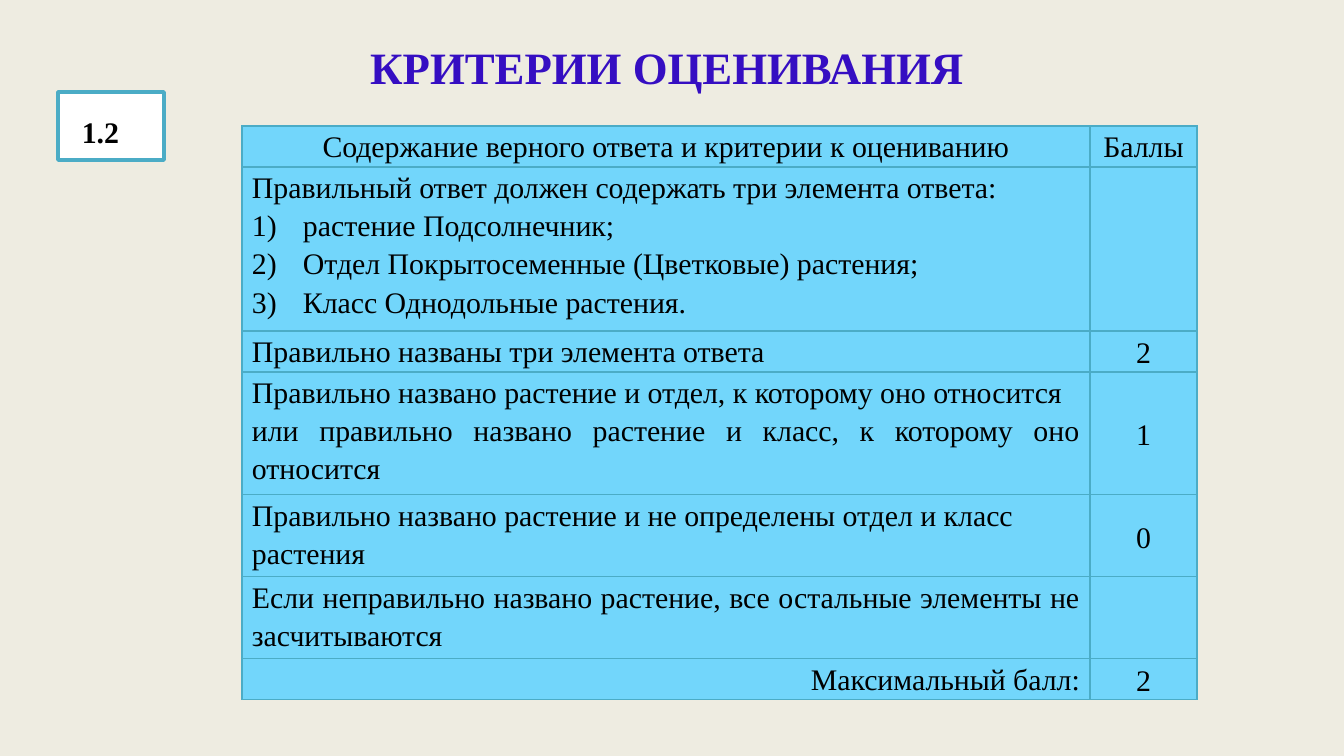
from dataclasses import dataclass

from lxml.etree import SubElement
from pptx import Presentation
from pptx.dml.color import RGBColor
from pptx.enum.shapes import MSO_SHAPE
from pptx.enum.text import MSO_ANCHOR as Anchor, PP_ALIGN as Align
from pptx.oxml.ns import qn
from pptx.util import Emu, Pt

PX = 914400 / 134.4
SERIF = "Times New Roman"
BLACK, WHITE, CREAM = "000000", "FFFFFF", "EEECE1"
VIOLET, TEAL, SKY = "350EC2", "4BACC6", "72D6FB"
LINE_HEIGHT = 41
COLUMNS = (848, 107)


@dataclass(frozen=True)
class Para:
    """One paragraph of a criterion."""
    text: str
    align: Align = Align.JUSTIFY
    numbered: bool = False


@dataclass(frozen=True)
class Criterion:
    """One table row; its height is a count of text lines."""
    lines: int
    paras: tuple[Para, ...]
    points: str = ""
    points_anchor: Anchor = Anchor.MIDDLE


CRITERIA = (
    Criterion(1, (Para("Содержание верного ответа и критерии к оцениванию", Align.CENTER),),
              "Баллы", Anchor.TOP),
    Criterion(4, (Para("Правильный ответ должен содержать три элемента ответа:"),
                  Para("растение Подсолнечник;", numbered=True),
                  Para("Отдел Покрытосеменные (Цветковые) растения;", numbered=True),
                  Para("Класс Однодольные растения.", numbered=True))),
    Criterion(1, (Para("Правильно названы три элемента ответа"),), "2"),
    Criterion(3, (Para("Правильно названо растение и отдел, к которому оно относится"),
                  Para("или правильно названо растение и класс, к которому оно относится")), "1"),
    Criterion(2, (Para("Правильно названо растение и не определены отдел и класс растения",
                       Align.LEFT),), "0"),
    Criterion(2, (Para("Если неправильно названо растение, все остальные элементы "
                       "не засчитываются"),)),
    Criterion(1, (Para("Максимальный балл:", Align.RIGHT),), "2"),
)


def px(n: int) -> Emu:
    """Turn pixels into EMU."""
    return Emu(round(n * PX))


def rgb(color: str) -> RGBColor:
    """Turn a hex string into a colour."""
    return RGBColor.from_string(color)


def add_run(p, text: str, size: int = 16, color: str = BLACK,
            bold: bool = False, font: str = SERIF) -> None:
    """Append a formatted run to a paragraph."""
    r = p.add_run()
    r.text = text
    r.font.name, r.font.size, r.font.bold = font, Pt(size), bold
    r.font.color.rgb = rgb(color)


def number(p) -> None:
    """Number a paragraph as 1), 2), 3) with a hanging indent."""
    pPr = p._p.get_or_add_pPr()
    pPr.set("marL", str(px(51)))
    pPr.set("indent", str(-px(51)))
    SubElement(pPr, qn("a:buFont"), typeface="+mj-lt")
    SubElement(pPr, qn("a:buAutoNum"), type="arabicParenR")


def add_borders(cell) -> None:
    """Draw a thin line on the four sides of a cell."""
    tcPr = cell._tc.get_or_add_tcPr()
    for i, side in enumerate(("lnL", "lnR", "lnT", "lnB")):
        ln = tcPr.makeelement(qn(f"a:{side}"), {"w": str(Pt(0.79))})
        SubElement(SubElement(ln, qn("a:solidFill")), qn("a:srgbClr"), val=TEAL)
        tcPr.insert(i, ln)


def fill_cell(cell, paras: tuple[Para, ...], anchor: Anchor) -> None:
    """Format a cell and write its paragraphs."""
    cell.fill.solid()
    cell.fill.fore_color.rgb = rgb(SKY)
    add_borders(cell)
    cell.margin_left = cell.margin_right = px(10)
    cell.margin_top = cell.margin_bottom = 0
    cell.vertical_anchor = anchor
    tf = cell.text_frame
    for i, para in enumerate(paras):
        p = tf.add_paragraph() if i else tf.paragraphs[0]
        p.alignment, p.line_spacing = para.align, 1.15
        if para.numbered:
            number(p)
        add_run(p, para.text)


def add_title(s) -> None:
    """Place and write the slide title."""
    sp = s.shapes.title
    sp.left, sp.top, sp.width, sp.height = px(16), px(19), px(1302), px(95)
    tf = sp.text_frame
    tf.vertical_anchor = Anchor.MIDDLE
    p = tf.paragraphs[0]
    p.alignment = Align.CENTER
    add_run(p, "КРИТЕРИИ ОЦЕНИВАНИЯ", 24, VIOLET, True)


def add_task_label(s) -> None:
    """Draw the framed task number."""
    sp = s.shapes.add_shape(MSO_SHAPE.RECTANGLE, px(58), px(92), px(106), px(68))
    sp.shadow.inherit = False
    sp.fill.solid()
    sp.fill.fore_color.rgb = rgb(WHITE)
    sp.line.color.rgb, sp.line.width = rgb(TEAL), Pt(2)
    tf = sp.text_frame
    tf.word_wrap, tf.vertical_anchor = True, Anchor.TOP
    p = tf.paragraphs[0]
    p.alignment = Align.LEFT
    add_run(p, " ", 24, font="Karla")
    add_run(p, "1.2", bold=True)


def add_criteria(s) -> None:
    """Build the table of criteria and points."""
    height = LINE_HEIGHT * sum(c.lines for c in CRITERIA)
    table = s.shapes.add_table(len(CRITERIA), len(COLUMNS), px(242), px(126),
                               px(sum(COLUMNS)), px(height)).table
    for column, width in zip(table.columns, COLUMNS):
        column.width = px(width)
    for i, c in enumerate(CRITERIA):
        table.rows[i].height = px(LINE_HEIGHT * c.lines)
        points = (Para(c.points, Align.CENTER),) if c.points else ()
        fill_cell(table.cell(i, 0), c.paras, Anchor.TOP)
        fill_cell(table.cell(i, 1), points, c.points_anchor)


def main() -> None:
    """Build and save the slide."""
    prs = Presentation()
    prs.slide_width, prs.slide_height = px(1344), px(756)
    s = prs.slides.add_slide(prs.slide_layouts[5])
    s.background.fill.solid()
    s.background.fill.fore_color.rgb = rgb(CREAM)
    add_title(s)
    add_task_label(s)
    add_criteria(s)
    prs.save("out.pptx")


if __name__ == "__main__":
    main()
